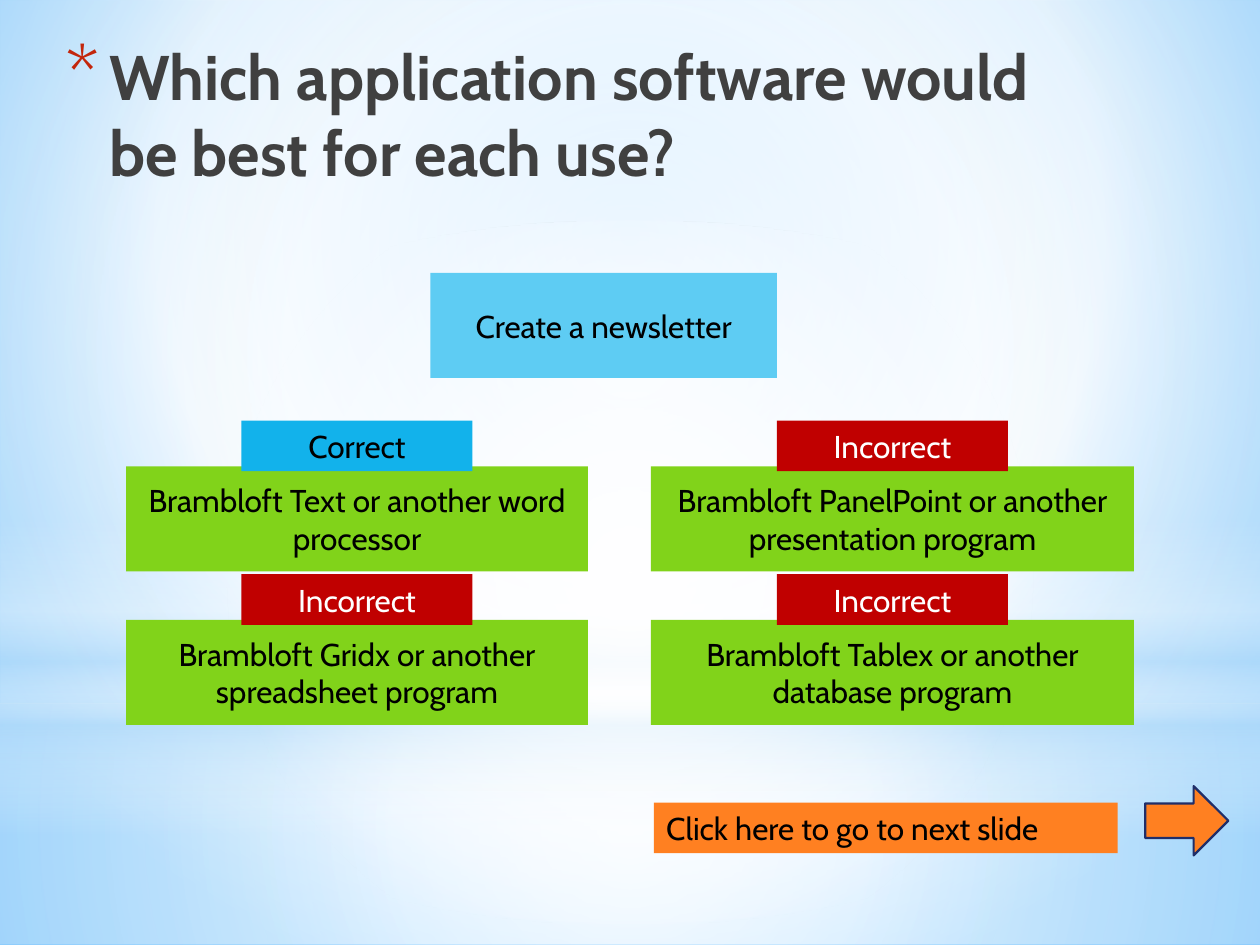
from lxml.etree import SubElement
from pptx import Presentation
from pptx.dml.color import RGBColor
from pptx.enum.shapes import MSO_SHAPE
from pptx.enum.text import MSO_ANCHOR, MSO_AUTO_SIZE, PP_ALIGN
from pptx.oxml.ns import qn
from pptx.util import Pt

FONT = "Cabin"
CENTER = (50, 50, 50, 50)
WIDTH, HEIGHT = 720, 540
CARD_HEIGHT = 60
TAG_WIDTH, TAG_HEIGHT, TAG_RISE = 132, 29, 26.2
COLUMNS = [(72, 264), (372, 276)]
ROWS = [266.5, 354.25]
ANSWERS = [
    [("Brambloft Text or another word processor", True),
     ("Brambloft PanelPoint or another presentation program", False)],
    [("Brambloft Gridx or another spreadsheet program", False),
     ("Brambloft Tablex or another database program", False)],
]


def color(hex_text):
    """Turn a hex string into a colour."""
    return RGBColor.from_string(hex_text)


def paint_gradient(properties, stops, focus=None):
    """Swap a solid fill for a circular gradient, or a vertical one without focus."""
    solid = properties.find(qn("a:solidFill"))
    gradient = SubElement(properties, qn("a:gradFill"), rotWithShape="1")
    properties.replace(solid, gradient)
    stop_list = SubElement(gradient, qn("a:gsLst"))
    for position, hex_text, opacity in stops:
        stop = SubElement(stop_list, qn("a:gs"), pos=str(position * 1000))
        shade = SubElement(stop, qn("a:srgbClr"), val=hex_text)
        if opacity < 100:
            SubElement(shade, qn("a:alpha"), val=str(opacity * 1000))
    if focus:
        circle = SubElement(gradient, qn("a:path"), {"path": "circle"})
        sides = {side: str(value * 1000) for side, value in zip("ltrb", focus)}
        SubElement(circle, qn("a:fillToRect"), sides)
    else:
        SubElement(gradient, qn("a:lin"), ang="5400000", scaled="0")


def add_block(page, box, fill, kind=MSO_SHAPE.RECTANGLE):
    """Add a plain filled shape without outline or shadow."""
    shape = page.shapes.add_shape(kind, *map(Pt, box))
    shape.shadow.inherit = False
    shape.fill.solid()
    shape.fill.fore_color.rgb = color(fill)
    shape.line.fill.background()
    return shape


def write(para, text, size, hex_text, bold=False):
    """Add one formatted run to a paragraph."""
    span = para.add_run()
    span.text = text
    span.font.name = FONT
    span.font.size = Pt(size)
    span.font.bold = bold
    span.font.color.rgb = color(hex_text)


def add_label(page, box, text, fill, ink="000000", align=PP_ALIGN.CENTER):
    """Add a filled rectangle with one line of thought in it."""
    frame = add_block(page, box, fill).text_frame
    frame.word_wrap = True
    frame.vertical_anchor = MSO_ANCHOR.MIDDLE
    para = frame.paragraphs[0]
    para.alignment = align
    write(para, text, 18, ink)


def add_backdrop(page, box):
    """Paint the background and its translucent glow layers."""
    left, top, width, height = box
    horizon = top + 402
    page.background.fill.solid()
    paint_gradient(
        page._element.find(".//" + qn("p:bgPr")),
        [(0, "9ED5FF", 100), (60, "FFFFFF", 100), (100, "5BB9FF", 100)],
        (20, 10, 20, 60))
    layers = [
        (horizon, height - 402, MSO_SHAPE.RECTANGLE, CENTER,
         [(0, "FFFFFF", 91), (37, "FFFFFF", 76), (100, "B4DCFA", 79)]),
        (top, 402, MSO_SHAPE.RECTANGLE, CENTER,
         [(0, "FFFFFF", 89), (48, "FFFFFF", 62), (100, "B4DCFA", 79)]),
        (top + 297, 180, MSO_SHAPE.RECTANGLE, None,
         [(0, "FFFFFF", 0), (29, "FFFFFF", 30), (45, "B4DCFA", 40),
          (55, "FFFFFF", 26), (65, "B4DCFA", 60), (100, "FFFFFF", 0)]),
        (top + 126, 402, MSO_SHAPE.OVAL, CENTER,
         [(0, "FFFFFF", 100), (56, "FFFFFF", 0)]),
    ]
    for layer_top, layer_height, kind, focus, stops in layers:
        layer = add_block(page, (left, layer_top, width, layer_height), "FFFFFF", kind)
        paint_gradient(layer._element.spPr, stops, focus)


def add_title(page, box, text):
    """Place the title in front of the backdrop with its star bullet."""
    title = page.shapes.title
    page.shapes._spTree.append(title._element)
    title.left, title.top, title.width, title.height = map(Pt, box)
    frame = title.text_frame
    frame.word_wrap = True
    frame.auto_size = MSO_AUTO_SIZE.NONE
    frame.vertical_anchor = MSO_ANCHOR.TOP
    para = frame.paragraphs[0]
    para.alignment = PP_ALIGN.LEFT
    write(para, text, 36, "404040", bold=True)
    settings = para._p.get_or_add_pPr()
    settings.set("marL", str(Pt(25.2)))
    settings.set("indent", str(-Pt(25.2)))
    bullet_color = SubElement(settings, qn("a:buClr"))
    SubElement(bullet_color, qn("a:srgbClr"), val="C3260C")
    SubElement(settings, qn("a:buSzPct"), val="128000")
    SubElement(settings, qn("a:buFont"), typeface=FONT)
    SubElement(settings, qn("a:buChar"), char="*")


def add_answer(page, box, text, correct):
    """Add an answer card with its verdict tag centred on the top edge."""
    left, top, width, height = box
    add_label(page, box, text, "81D31A")
    verdict = ("Correct", "12B2EB", "000000") if correct else ("Incorrect", "C00000", "FFFFFF")
    tag = (left + (width - TAG_WIDTH) / 2, top - TAG_RISE, TAG_WIDTH, TAG_HEIGHT)
    add_label(page, tag, *verdict)


def add_next_prompt(page, box):
    """Add the prompt bar and the arrow to its right."""
    left, top, width, height = box
    add_label(page, box, "Click here to go to next slide", "FF8021", align=PP_ALIGN.LEFT)
    arrow_box = (left + width + 15.8, top - 9.4, 47.5, 39.6)
    arrow = add_block(page, arrow_box, "FF8021", MSO_SHAPE.RIGHT_ARROW)
    arrow.line.color.rgb = color("1F2E69")
    arrow.line.width = Pt(1.25)


def main():
    """Build the quiz slide and save the deck."""
    deck = Presentation()
    deck.slide_width, deck.slide_height = Pt(WIDTH), Pt(HEIGHT)
    page = deck.slides.add_slide(deck.slide_layouts.get_by_name("Title Only"))
    add_backdrop(page, (0, 0, WIDTH, HEIGHT))
    add_title(page, (30, 18, 594, 90), "Which application software would be best for each use?")
    add_label(page, (246, 156, 198, CARD_HEIGHT), "Create a newsletter", "5ECCF3")
    for top, answers in zip(ROWS, ANSWERS):
        for (left, width), (text, correct) in zip(COLUMNS, answers):
            add_answer(page, (left, top, width, CARD_HEIGHT), text, correct)
    add_next_prompt(page, (373.6, 458.6, 265, TAG_HEIGHT))
    deck.save("out.pptx")


if __name__ == "__main__":
    main()
